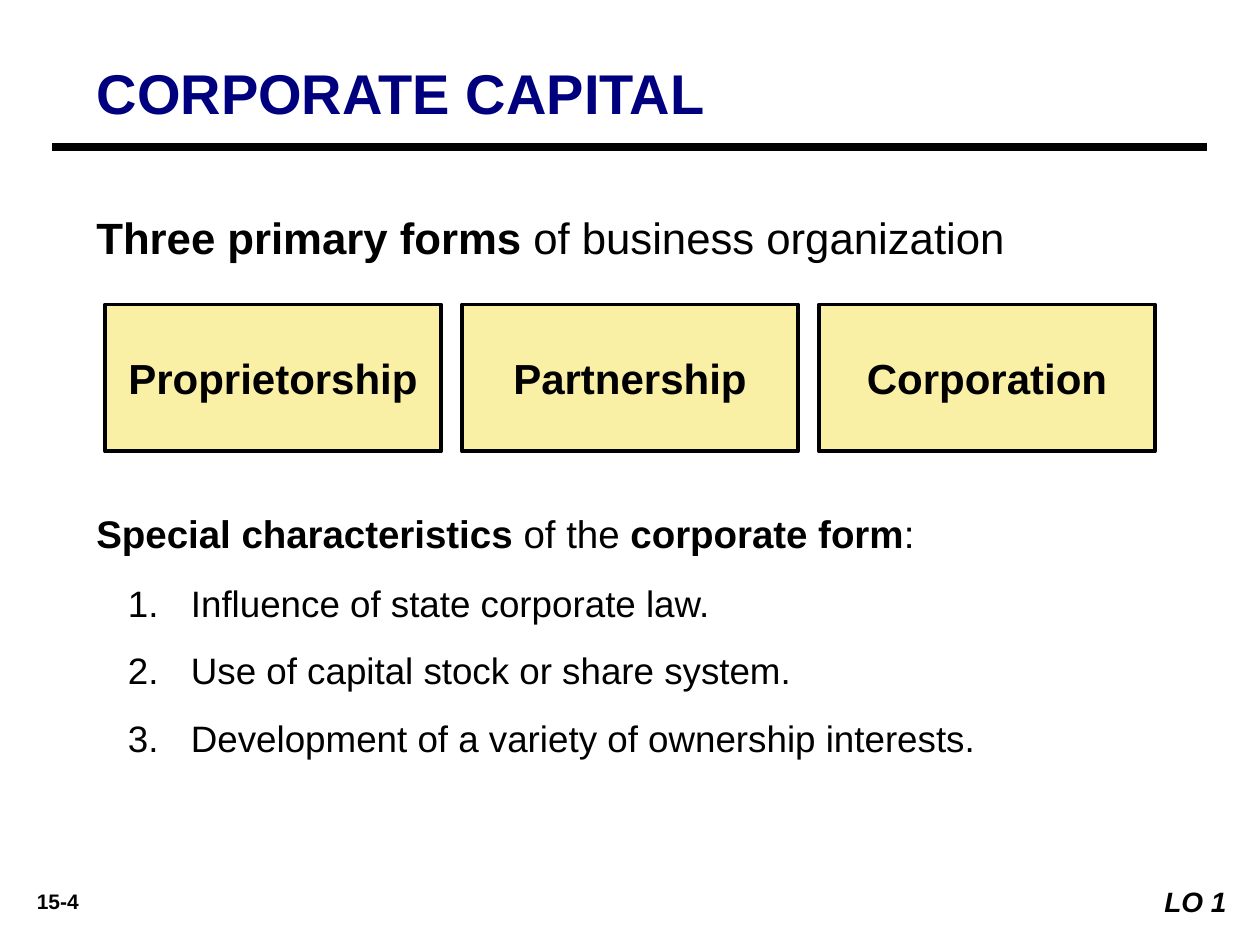
from lxml import etree
from pptx import Presentation
from pptx.dml.color import RGBColor
from pptx.enum.shapes import MSO_CONNECTOR, MSO_SHAPE
from pptx.enum.text import MSO_ANCHOR as ANCHOR, PP_ALIGN as ALIGN
from pptx.oxml.ns import qn
from pptx.util import Pt

BLACK = RGBColor(0, 0, 0)
WHITE = RGBColor(255, 255, 255)
NAVY = RGBColor(0, 0, 0x7F)
CREAM = RGBColor(0xF9, 0xEF, 0xA5)


def add_runs(p, runs, size, color=BLACK):
    for text, bold in runs:
        r = p.add_run()
        r.text = text
        r.font.name = "Arial"
        r.font.size = Pt(size)
        r.font.bold = bold
        r.font.color.rgb = color


def add_text(left, top, width, height):
    tf = slide.shapes.add_textbox(Pt(left), Pt(top), Pt(width), Pt(height)).text_frame
    tf.word_wrap = True
    return tf


prs = Presentation()
prs.slide_width, prs.slide_height = Pt(720), Pt(540)
slide = prs.slides.add_slide(prs.slide_layouts[5])

title = slide.shapes.title
title.left, title.top, title.width, title.height = Pt(48), Pt(30), Pt(648), Pt(44)
tf = title.text_frame
tf.vertical_anchor = ANCHOR.TOP
p = tf.paragraphs[0]
p.alignment = ALIGN.LEFT
add_runs(p, [("CORPORATE CAPITAL", True)], 32, NAVY)

rule = slide.shapes.add_connector(MSO_CONNECTOR.STRAIGHT, Pt(30), Pt(84), Pt(690), Pt(84))
rule.line.color.rgb = BLACK
rule.line.width = Pt(4.5)
etree.SubElement(rule._element.spPr, qn("a:effectLst"))

p = add_text(48, 108, 630, 47).paragraphs[0]
p.line_spacing = 1.3
add_runs(p, [("Three primary forms ", True), ("of business organization", False)], 25)

for i, form in enumerate(["Proprietorship", "Partnership", "Corporation"]):
    sp = slide.shapes.add_shape(MSO_SHAPE.RECTANGLE, Pt(60 + 204 * i), Pt(174), Pt(192), Pt(84))
    sp.shadow.inherit = False
    sp.fill.solid()
    sp.fill.fore_color.rgb = CREAM
    sp.line.color.rgb = BLACK
    sp.line.width = Pt(2.25)
    tf = sp.text_frame
    tf.vertical_anchor = ANCHOR.MIDDLE
    p = tf.paragraphs[0]
    p.alignment = ALIGN.CENTER
    add_runs(p, [(form, True)], 24)

tf = add_text(48, 281.5, 630, 163)
p = tf.paragraphs[0]
p.line_spacing = 1.25
add_runs(p, [("Special characteristics ", True), ("of the ", False),
             ("corporate form", True), (":", False)], 22)
for item in ["Influence of state corporate law.",
             "Use of capital stock or share system.",
             "Development of a variety of ownership interests."]:
    p = tf.add_paragraph()
    p.level = 1
    p.line_spacing = 1.25
    p.space_before = Pt(7.3)
    add_runs(p, [(item, False)], 21)
    pPr = p._p.get_or_add_pPr()
    pPr.set("marL", str(Pt(54)))
    pPr.set("indent", str(Pt(-36)))
    color = etree.SubElement(pPr, qn("a:buClr"))
    etree.SubElement(color, qn("a:srgbClr"), val=str(BLACK))
    etree.SubElement(pPr, qn("a:buFont"), typeface="Arial")
    etree.SubElement(pPr, qn("a:buAutoNum"), type="arabicPeriod")

p = add_text(6, 504, 54, 22).paragraphs[0]
p.alignment = ALIGN.CENTER
add_runs(p, [("15-4", True)], 12)

sp = slide.shapes.add_shape(MSO_SHAPE.RECTANGLE, Pt(642), Pt(502), Pt(66), Pt(26.5))
sp.shadow.inherit = False
sp.fill.solid()
sp.fill.fore_color.rgb = WHITE
sp.line.fill.background()
tf = sp.text_frame
tf.vertical_anchor = ANCHOR.TOP
p = tf.paragraphs[0]
p.alignment = ALIGN.RIGHT
add_runs(p, [("LO 1", True)], 16)
p.runs[0].font.italic = True

prs.save("out.pptx")
